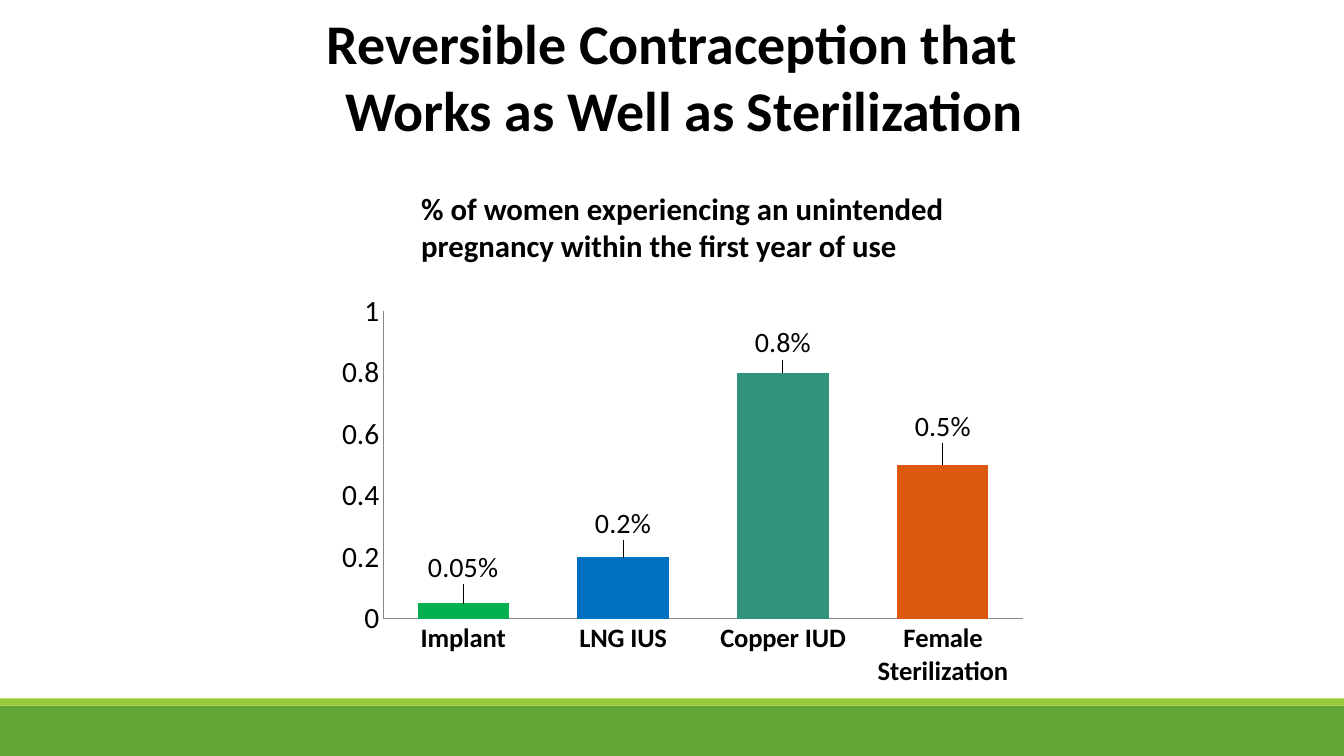
import pptx
import pptx.chart.data
import pptx.dml.color
import pptx.enum.chart
import pptx.enum.shapes
import pptx.enum.text
import pptx.oxml
import pptx.oxml.ns
import pptx.util

Inches = pptx.util.Inches
Pt = pptx.util.Pt
RGBColor = pptx.dml.color.RGBColor

BLACK = RGBColor(0x00, 0x00, 0x00)
AXIS_GRAY = RGBColor(0x86, 0x86, 0x86)
GREEN = RGBColor(0x63, 0xA5, 0x37)
LIME = RGBColor(0x99, 0xCB, 0x38)
IMPLANT_GREEN = RGBColor(0x00, 0xB0, 0x50)
LNG_BLUE = RGBColor(0x00, 0x70, 0xC0)
COPPER_TEAL = RGBColor(0x31, 0x93, 0x7B)
STERILIZATION_ORANGE = RGBColor(0xDC, 0x58, 0x0E)
FONT = "Calibri"

METHODS = [
    ("Implant", 0.05, IMPLANT_GREEN, -0.035),
    ("LNG IUS", 0.2, LNG_BLUE, -0.03),
    ("Copper IUD", 0.8, COPPER_TEAL, -0.02),
    ("Female Sterilization", 0.5, STERILIZATION_ORANGE, -0.04),
]


def style_font(font, size, bold=False):
    """Apply the slide's typeface in black."""
    font.name = FONT
    font.size = Pt(size)
    font.bold = bold
    font.color.rgb = BLACK


def manual_layout(**settings):
    """Return a chart layout element holding the given settings."""
    values = "".join(f'<c:{key} val="{value}"/>' for key, value in settings.items())
    return pptx.oxml.parse_xml(
        f'<c:layout {pptx.oxml.ns.nsdecls("c")}>'
        f"<c:manualLayout>{values}</c:manualLayout></c:layout>"
    )


def add_footer_bands(slide, left, top, width, height):
    """Draw the lime strip above the green footer."""
    strip = Inches(0.07)
    for band_top, band_height, color in (
        (top + strip, height - strip, GREEN),
        (top, strip, LIME),
    ):
        band = slide.shapes.add_shape(
            pptx.enum.shapes.MSO_SHAPE.RECTANGLE, left, band_top, width, band_height
        )
        band.shadow.inherit = False
        band.fill.solid()
        band.fill.fore_color.rgb = color
        band.line.fill.background()


def add_title(slide, left, top, width, height):
    """Place the two-line title, its second line slightly indented."""
    title = slide.shapes.title
    title.left, title.top, title.width, title.height = left, top, width, height
    frame = title.text_frame
    frame.word_wrap = True
    frame.auto_size = pptx.enum.text.MSO_AUTO_SIZE.NONE
    frame.vertical_anchor = pptx.enum.text.MSO_ANCHOR.MIDDLE
    heading = frame.paragraphs[0]
    heading.alignment = pptx.enum.text.PP_ALIGN.CENTER
    properties = heading._p.get_or_add_pPr()
    hanging = Inches(0.24)
    properties.set("marL", str(hanging))
    properties.set("indent", str(-hanging))
    for index, line in enumerate(
        ("Reversible Contraception that", "Works as Well as Sterilization")
    ):
        if index:
            heading.add_line_break()
        run = heading.add_run()
        run.text = line
        style_font(run.font, 40, True)


def add_chart_caption(slide, left, top, width, height):
    """Write what the chart measures."""
    caption = slide.shapes.add_textbox(left, top, width, height).text_frame
    caption.word_wrap = True
    run = caption.paragraphs[0].add_run()
    run.text = (
        "% of women experiencing an unintended pregnancy within the first year of use"
    )
    style_font(run.font, 22, True)


def style_axis(axis, size, bold):
    """Give an axis a thin gray line without ticks or gridlines."""
    axis.has_major_gridlines = False
    axis.major_tick_mark = pptx.enum.chart.XL_TICK_MARK.NONE
    axis.minor_tick_mark = pptx.enum.chart.XL_TICK_MARK.NONE
    axis.format.line.color.rgb = AXIS_GRAY
    axis.format.line.width = Pt(0.75)
    style_font(axis.tick_labels.font, size, bold)


def add_bar(series, index, rate, color, label_shift):
    """Color one bar and place its percentage above it."""
    point = series.points[index]
    point.format.fill.solid()
    point.format.fill.fore_color.rgb = color
    label = point.data_label
    run = label.text_frame.paragraphs[0].add_run()
    run.text = f"{rate}%"
    style_font(run.font, 20)
    label.position = pptx.enum.chart.XL_LABEL_POSITION.OUTSIDE_END
    label_index = series._element.xpath(f'c:dLbls/c:dLbl/c:idx[@val="{index}"]')[0]
    label_index.addnext(manual_layout(x=0, y=label_shift))


def add_pregnancy_chart(slide, left, top, width, height):
    """Chart unintended pregnancy rates by contraceptive method."""
    rates = pptx.chart.data.CategoryChartData()
    rates.categories = [method[0] for method in METHODS]
    rates.add_series("Series 1", [method[1] for method in METHODS])
    chart = slide.shapes.add_chart(
        pptx.enum.chart.XL_CHART_TYPE.COLUMN_CLUSTERED, left, top, width, height, rates
    ).chart
    chart.has_title = False
    chart.has_legend = False
    style_font(chart.font, 18)
    style_axis(chart.category_axis, 19, True)
    style_axis(chart.value_axis, 21, False)
    chart.value_axis.minimum_scale = 0
    chart.value_axis.maximum_scale = 1
    chart.value_axis.major_unit = 0.2
    chart.value_axis.tick_labels.number_format = "General"
    chart.value_axis.tick_labels.number_format_is_linked = False

    plot = chart.plots[0]
    plot.gap_width = 75
    plot.vary_by_categories = False
    series = plot.series[0]
    series.format.fill.solid()
    series.format.fill.fore_color.rgb = LIME
    series.data_labels.show_value = True
    style_font(series.data_labels.font, 20, True)
    for index, (_, rate, color, label_shift) in enumerate(METHODS):
        add_bar(series, index, rate, color, label_shift)

    plot_area = chart._chartSpace.chart.plotArea
    for layout in plot_area.findall(pptx.oxml.ns.qn("c:layout")):
        plot_area.remove(layout)
    plot_area.insert(0, manual_layout(
        layoutTarget="inner", xMode="edge", yMode="edge",
        x=0.105, y=0.044, w=0.875, h=0.718,
    ))


def main():
    """Build and save the contraception slide."""
    deck = pptx.Presentation()
    deck.slide_width = Inches(13.33)
    deck.slide_height = Inches(7.5)
    slide = deck.slides.add_slide(deck.slide_layouts.get_by_name("Title Only"))
    add_footer_bands(slide, 0, Inches(6.93), deck.slide_width, Inches(0.57))
    add_title(slide, Inches(1.79), 0, Inches(9.75), Inches(1.5))
    add_pregnancy_chart(slide, Inches(3.04), Inches(2.9), Inches(7.25), Inches(4.25))
    add_chart_caption(slide, Inches(4.08), Inches(1.83), Inches(5.5), Inches(0.92))
    deck.save("out.pptx")


if __name__ == "__main__":
    main()
